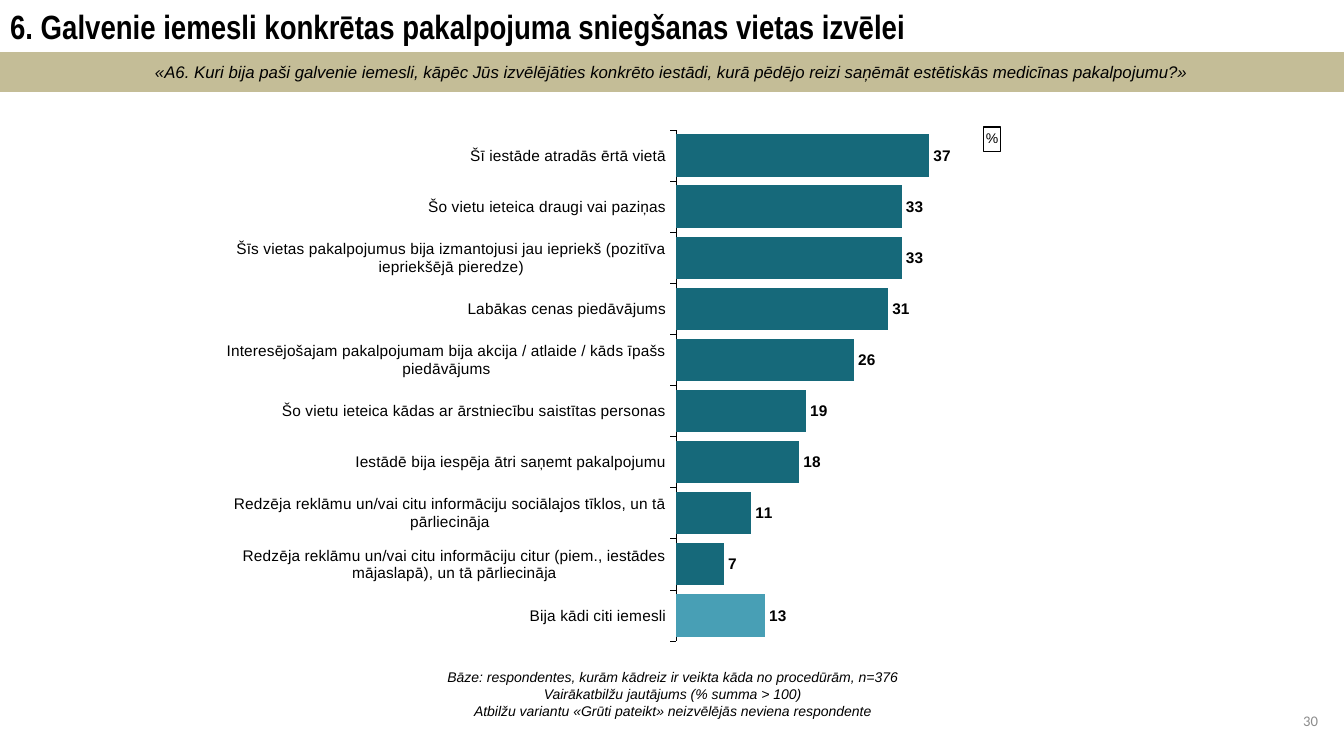
from dataclasses import dataclass

from lxml.etree import SubElement
from pptx import Presentation
from pptx.chart.chart import Chart
from pptx.chart.data import CategoryChartData as ChartData
from pptx.dml.color import RGBColor
from pptx.enum.chart import XL_CHART_TYPE as ChartType
from pptx.enum.chart import XL_LABEL_POSITION as LabelPos
from pptx.enum.chart import XL_TICK_MARK as Tick
from pptx.enum.shapes import MSO_SHAPE as Shape
from pptx.enum.text import MSO_ANCHOR as Anchor
from pptx.enum.text import MSO_AUTO_SIZE as AutoSize
from pptx.enum.text import PP_ALIGN as Align
from pptx.oxml.ns import qn
from pptx.text.text import Font
from pptx.util import Inches, Pt

BLACK = RGBColor(0x00, 0x00, 0x00)
GRAY = RGBColor(0x8C, 0x8C, 0x8C)
SAND = RGBColor(0xC4, 0xBD, 0x97)
TEAL = RGBColor(0x16, 0x69, 0x7A)
LIGHT = RGBColor(0x48, 0x9F, 0xB5)

TITLE = "6. Galvenie iemesli konkrētas pakalpojuma sniegšanas vietas izvēlei"
QUESTION = (
    "«A6. Kuri bija paši galvenie iemesli, kāpēc Jūs izvēlējāties konkrēto "
    "iestādi, kurā pēdējo reizi saņēmāt estētiskās medicīnas pakalpojumu?»"
)
NOTES = [
    "Bāze: respondentes, kurām kādreiz ir veikta kāda no procedūrām, n=376",
    "Vairākatbilžu jautājums (% summa > 100)",
    "Atbilžu variantu «Grūti pateikt» neizvēlējās neviena respondente",
]


@dataclass
class Reason:
    label: str
    share: int
    color: RGBColor = TEAL


REASONS = [
    Reason("Šī iestāde atradās ērtā vietā", 37),
    Reason("Šo vietu ieteica draugi vai paziņas", 33),
    Reason("Šīs vietas pakalpojumus bija izmantojusi jau iepriekš "
           "(pozitīva iepriekšējā pieredze)", 33),
    Reason("Labākas cenas piedāvājums", 31),
    Reason("Interesējošajam pakalpojumam bija akcija / atlaide / "
           "kāds īpašs piedāvājums", 26),
    Reason("Šo vietu ieteica kādas ar ārstniecību saistītas personas", 19),
    Reason("Iestādē bija iespēja ātri saņemt pakalpojumu", 18),
    Reason("Redzēja reklāmu un/vai citu informāciju sociālajos tīklos, "
           "un tā pārliecināja", 11),
    Reason("Redzēja reklāmu un/vai citu informāciju citur "
           "(piem., iestādes mājaslapā), un tā pārliecināja", 7),
    Reason("Bija kādi citi iemesli", 13, LIGHT),
]


@dataclass
class Style:
    size: float
    name: str = "Arial"
    color: RGBColor = BLACK
    bold: bool = False
    italic: bool = False
    align: Align = Align.CENTER
    anchor: Anchor = Anchor.MIDDLE


def set_font(font: Font, style: Style) -> None:
    font.size = Pt(style.size)
    font.name = style.name
    font.color.rgb = style.color
    font.bold = style.bold
    font.italic = style.italic


def write(shape, lines: list[str], style: Style) -> None:
    frame = shape.text_frame
    frame.text = "\n".join(lines)
    frame.word_wrap = True
    frame.auto_size = AutoSize.NONE
    frame.vertical_anchor = style.anchor
    for par in frame.paragraphs:
        par.alignment = style.align
        set_font(par.font, style)


def place(parent, index: int, **parts: str | float) -> None:
    """Give a chart part a manual layout."""
    for old in parent.findall(qn("c:layout")):
        parent.remove(old)
    layout = SubElement(parent, qn("c:layout"))
    manual = SubElement(layout, qn("c:manualLayout"))
    for key, value in parts.items():
        SubElement(manual, qn(f"c:{key}")).set("val", str(value))
    parent.insert(index, layout)


def style_chart(chart: Chart) -> None:
    chart.has_legend = False
    set_font(chart.font, Style(9))

    # Boxed percent sign
    chart.has_title = True
    title = chart.chart_title
    title.text_frame.text = "%"
    set_font(title.text_frame.paragraphs[0].font, Style(10))
    title.format.line.color.rgb = BLACK
    title.format.line.width = Pt(0.75)
    title.include_in_layout = False
    place(title._element, 1, xMode="edge", yMode="edge", x=0.92, y=0.015)

    # Axes
    cats = chart.category_axis
    cats.reverse_order = True
    cats.has_major_gridlines = False
    cats.major_tick_mark = Tick.OUTSIDE
    cats.format.line.color.rgb = BLACK
    cats.format.line.width = Pt(0.25)
    set_font(cats.tick_labels.font, Style(11))
    values = chart.value_axis
    values.visible = False
    values.has_major_gridlines = False
    values.minimum_scale, values.maximum_scale = 0, 55

    # Bars and labels
    plot = chart.plots[0]
    plot.gap_width = 20
    plot.vary_by_categories = False
    bars = plot.series[0]
    bars.format.fill.solid()
    bars.format.fill.fore_color.rgb = TEAL
    for i, reason in enumerate(REASONS):
        if reason.color != TEAL:
            fill = bars.points[i].format.fill
            fill.solid()
            fill.fore_color.rgb = reason.color
    labels = bars.data_labels
    labels.show_value = True
    labels.position = LabelPos.OUTSIDE_END
    labels.number_format = "0"
    labels.number_format_is_linked = False
    set_font(labels.font, Style(11, bold=True))
    area = chart._chartSpace.chart.plotArea
    place(area, 0, layoutTarget="inner", xMode="edge", yMode="edge",
          x=0.565, y=0.021, w=0.435, h=0.956)


def main() -> None:
    deck = Presentation()
    deck.slide_width, deck.slide_height = Inches(13.33), Inches(7.5)
    slide = deck.slides.add_slide(deck.slide_layouts[5])
    shapes = slide.shapes

    # Title
    title = shapes.title
    title.left, title.top = Inches(0), Inches(0)
    title.width, title.height = Inches(13.33), Inches(0.52)
    write(title, [TITLE],
          Style(24, "Arial Narrow", bold=True, align=Align.LEFT))

    # Question band
    band = shapes.add_shape(Shape.RECTANGLE, Inches(0), Inches(0.52),
                            Inches(13.33), Inches(0.39))
    band.shadow.inherit = False
    band.fill.solid()
    band.fill.fore_color.rgb = SAND
    band.line.color.rgb = SAND
    band.line.width = Pt(0.75)
    write(band, [QUESTION], Style(12, italic=True))

    # Reasons chart
    data = ChartData(number_format="0")
    data.categories = [reason.label for reason in REASONS]
    data.add_series("Series 1", [reason.share for reason in REASONS])
    frame = shapes.add_chart(ChartType.BAR_CLUSTERED, Inches(1.86),
                             Inches(1.18), Inches(8.58), Inches(5.3), data)
    style_chart(frame.chart)

    # Base notes and page number
    base = shapes.add_textbox(Inches(1.67), Inches(6.48),
                              Inches(10), Inches(0.81))
    write(base, NOTES, Style(10, italic=True))
    page = shapes.add_textbox(Inches(11.75), Inches(7.01),
                              Inches(1.42), Inches(0.4))
    write(page, ["30"], Style(10.5, "Calibri", GRAY, align=Align.RIGHT,
                              anchor=Anchor.TOP))

    deck.save("out.pptx")


if __name__ == "__main__":
    main()
